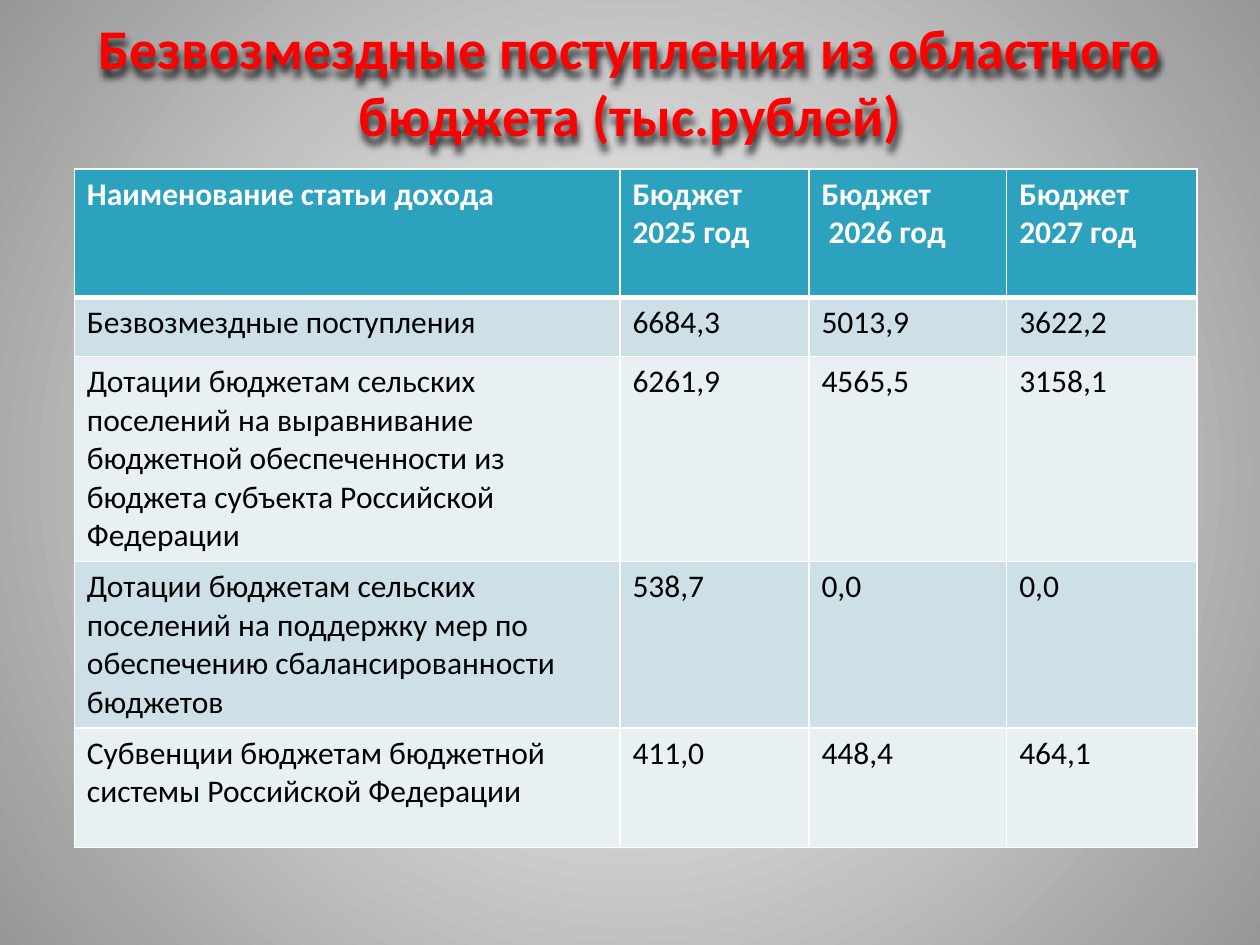
from lxml import etree
from pptx import Presentation
from pptx.dml.color import RGBColor
from pptx.enum import text
from pptx.oxml import parse_xml
from pptx.oxml.ns import nsdecls, qn
from pptx.util import Inches, Pt

FONT = "Calibri"
RED = RGBColor(0xFF, 0x00, 0x00)
WHITE = RGBColor(0xFF, 0xFF, 0xFF)
BLACK = RGBColor(0x00, 0x00, 0x00)
GREY = RGBColor(0x97, 0x97, 0x97)
TEAL = RGBColor(0x2D, 0xA2, 0xBF)
BANDS = (RGBColor(0xCD, 0xE0, 0xE8), RGBColor(0xE8, 0xF0, 0xF4))

COLUMN_WIDTHS = (4.33, 1.5, 1.57, 1.51)
ROW_HEIGHTS = (1.02, 0.47, 1.62, 1.32, 0.95)
ROWS = (
    ("Наименование статьи дохода", "Бюджет 2025 год", "Бюджет\n 2026 год", "Бюджет 2027 год"),
    ("Безвозмездные поступления", "6684,3", "5013,9", "3622,2"),
    ("Дотации бюджетам сельских поселений на выравнивание бюджетной "
     "обеспеченности из бюджета субъекта Российской Федерации", "6261,9", "4565,5", "3158,1"),
    ("Дотации бюджетам сельских поселений на поддержку мер по "
     "обеспечению сбалансированности бюджетов", "538,7", "0,0", "0,0"),
    ("Субвенции бюджетам бюджетной системы Российской Федерации", "411,0", "448,4", "464,1"),
)


def write_text(frame, wording, *, size, color, bold=False, align=None):
    """Fill a text frame, one paragraph for each line of the wording."""
    frame.word_wrap = True
    frame.text = wording
    for para in frame.paragraphs:
        para.alignment = align
        for span in para.runs:
            span.font.name = FONT
            span.font.size = Pt(size)
            span.font.bold = bold
            span.font.color.rgb = color


def paint_background(page):
    """Radial gradient, light in the centre."""
    fill = page.background.fill
    fill.gradient()
    for stop, color in zip(fill.gradient_stops, (WHITE, GREY)):
        stop.color.rgb = color
    gradient = page.background._cSld.find(".//" + qn("a:gradFill"))
    gradient.replace(gradient.find(qn("a:lin")), parse_xml(
        f'<a:path {nsdecls("a")} path="circle">'
        '<a:fillToRect l="50000" t="50000" r="50000" b="50000"/></a:path>'))


def place_title(page, left, top, width, height):
    title = page.shapes.title
    title.left, title.top, title.width, title.height = map(Inches, (left, top, width, height))
    write_text(title.text_frame, "Безвозмездные поступления из областного бюджета (тыс.рублей)",
               size=32, color=RED, bold=True, align=text.PP_ALIGN.CENTER)
    title.text_frame.vertical_anchor = text.MSO_ANCHOR.MIDDLE
    title.text_frame.auto_size = text.MSO_AUTO_SIZE.NONE
    # Soft shadow under the letters
    title._element.spPr.append(parse_xml(
        f'<a:effectLst {nsdecls("a")}>'
        '<a:outerShdw blurRad="50800" dist="50800" dir="5400000" algn="t" rotWithShape="0">'
        f'<a:srgbClr val="{BLACK}"><a:alpha val="80000"/></a:srgbClr>'
        '</a:outerShdw></a:effectLst>'))


def set_borders(cell, **widths):
    """White cell borders; lines must come before the fill."""
    properties = cell._tc.get_or_add_tcPr()
    for index, (side, width) in enumerate(widths.items()):
        line = etree.Element(qn(f"a:ln{side}"), w=str(Pt(width)))
        fill = etree.SubElement(line, qn("a:solidFill"))
        etree.SubElement(fill, qn("a:srgbClr"), val=str(WHITE))
        properties.insert(index, line)


def place_table(page, left, top, width, height):
    frame = page.shapes.add_table(len(ROWS), len(COLUMN_WIDTHS),
                                  *map(Inches, (left, top, width, height)))
    table = frame.table
    for column, size in zip(table.columns, COLUMN_WIDTHS):
        column.width = Inches(size)
    for row, size in zip(table.rows, ROW_HEIGHTS):
        row.height = Inches(size)
    for r, entries in enumerate(ROWS):
        header = r == 0
        for c, entry in enumerate(entries):
            cell = table.cell(r, c)
            cell.fill.solid()
            cell.fill.fore_color.rgb = TEAL if header else BANDS[(r - 1) % 2]
            write_text(cell.text_frame, entry, size=18, bold=header,
                       color=WHITE if header else BLACK)
            set_borders(cell, L=1, R=1, T=3 if r == 1 else 1, B=3 if header else 1)


def main():
    deck = Presentation()
    deck.slide_width, deck.slide_height = Inches(10), Inches(7.5)
    page = deck.slides.add_slide(deck.slide_layouts[5])
    paint_background(page)
    place_title(page, 0.5, 0.13, 9, 1.02)
    place_table(page, 0.59, 1.34, sum(COLUMN_WIDTHS), sum(ROW_HEIGHTS))
    deck.save("out.pptx")


if __name__ == "__main__":
    main()
